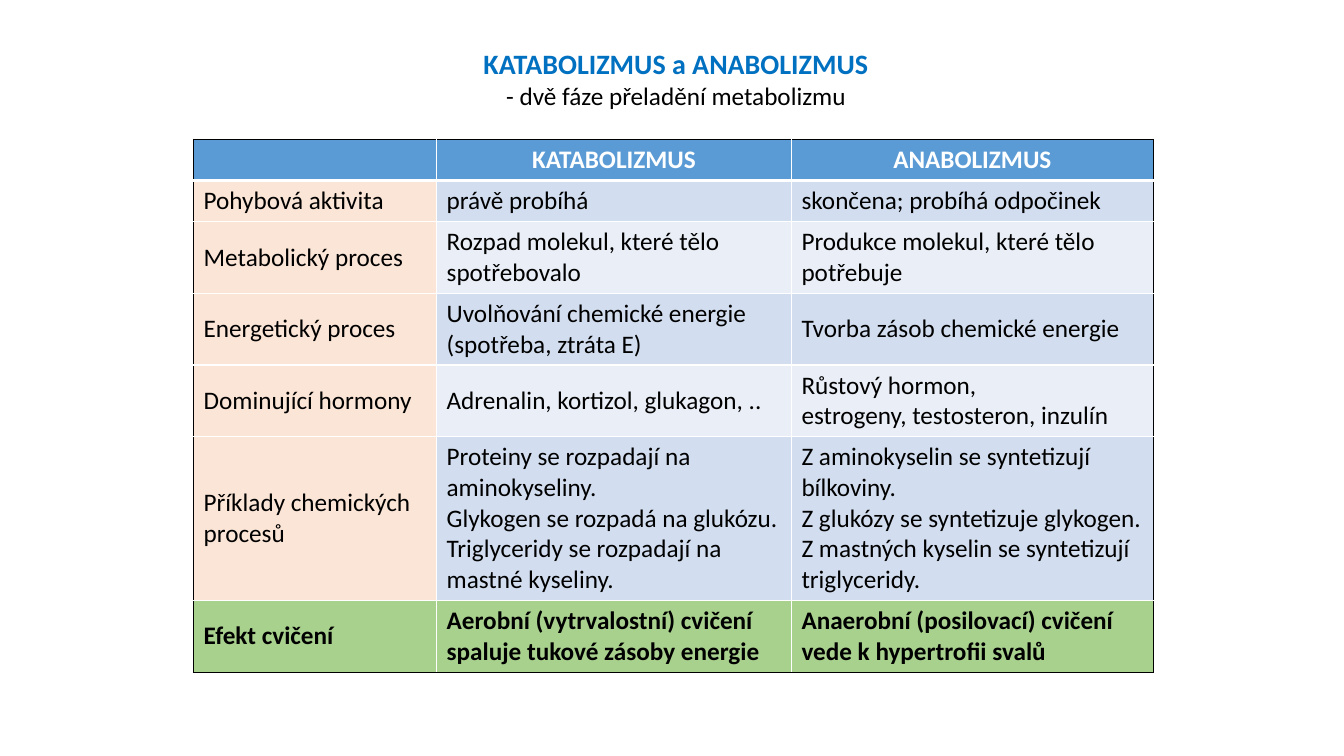
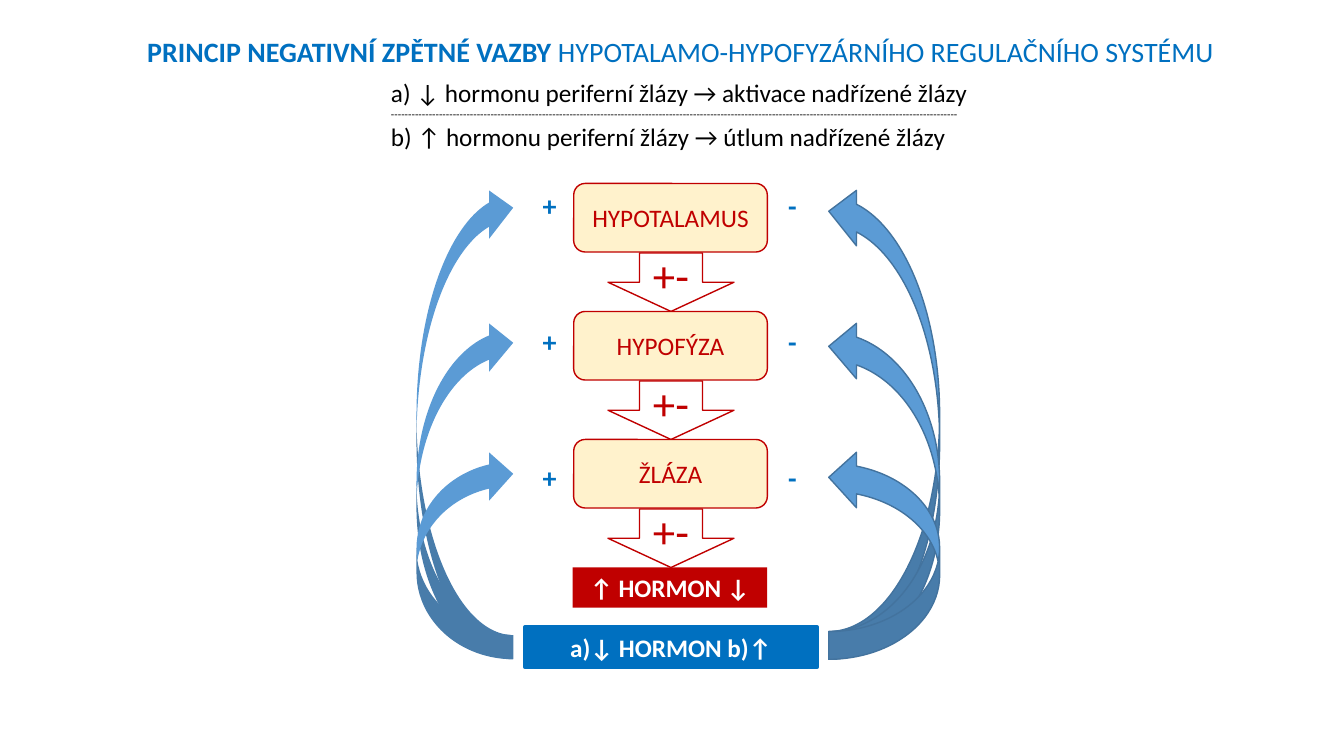
from lxml.etree import SubElement
from pptx import Presentation
from pptx.dml.color import RGBColor
from pptx.enum.shapes import MSO_SHAPE as KIND
from pptx.enum.text import MSO_ANCHOR as ANCHOR, PP_ALIGN as ALIGN
from pptx.oxml.ns import qn
from pptx.util import Pt

PX = 9144
FONT = "Calibri"
HUES = {
    "black": "000000", "white": "FFFFFF", "blue": "0070C0", "red": "C00000",
    "cream": "FFF2CC", "sky": "5B9BD5", "edge": "43739E", "peach": "FBE5D6",
    "green": "A9D18E", "dark": "D2DEEF", "light": "EAEFF7",
}
COLS = [241, 352, 359]
ROWS = [41, 41, 70, 70, 70, 161, 70]
CELLS = [
    ["", "KATABOLIZMUS", "ANABOLIZMUS"],
    ["Pohybová aktivita", "právě probíhá", "skončena; probíhá odpočinek"],
    ["Metabolický proces", "Rozpad molekul, které tělo spotřebovalo",
     "Produkce molekul, které tělo potřebuje"],
    ["Energetický proces", "Uvolňování chemické energie (spotřeba, ztráta E)",
     "Tvorba zásob chemické energie"],
    ["Dominující hormony", "Adrenalin, kortizol, glukagon, ..",
     "Růstový hormon,\nestrogeny, testosteron, inzulín"],
    ["Příklady chemických procesů",
     "Proteiny se rozpadají na aminokyseliny.\nGlykogen se rozpadá na glukózu.\n"
     "Triglyceridy se rozpadají na mastné kyseliny.",
     "Z aminokyselin se syntetizují bílkoviny.\nZ glukózy se syntetizuje glykogen.\n"
     "Z mastných kyselin se syntetizují triglyceridy."],
    ["Efekt cvičení", "Aerobní (vytrvalostní) cvičení spaluje tukové zásoby energie",
     "Anaerobní (posilovací) cvičení vede k hypertrofii svalů"],
]


def tint(name):
    return RGBColor.from_string(HUES[name])


def run(text, size=18, hue="black", bold=False):
    return text, size, hue, bold


def write(frame, lines, align=ALIGN.LEFT, gap=0):
    for i, line in enumerate(lines):
        para = frame.add_paragraph() if i else frame.paragraphs[0]
        para.alignment = align
        if i and gap:
            para.space_before = Pt(gap)
        for text, size, hue, bold in line:
            part = para.add_run()
            part.text = text
            font = part.font
            font.name, font.size, font.bold = FONT, Pt(size), bold
            font.color.rgb = tint(hue)


def label(slide, box, lines, align=ALIGN.CENTER, gap=0):
    frame = slide.shapes.add_textbox(*(n * PX for n in box)).text_frame
    frame.word_wrap = True
    write(frame, lines, align, gap)


def shape(slide, kind, box, fill=None, line=None, width=1, text=None, turn=0):
    item = slide.shapes.add_shape(kind, *(n * PX for n in box))
    item.shadow.inherit = False
    item.rotation = turn
    if fill:
        item.fill.solid()
        item.fill.fore_color.rgb = tint(fill)
    else:
        item.fill.background()
    if line:
        item.line.color.rgb = tint(line)
        item.line.width = Pt(width)
    else:
        item.line.fill.background()
    if text:
        item.text_frame.vertical_anchor = ANCHOR.MIDDLE
        write(item.text_frame, [[text]], ALIGN.CENTER)


def border(cell, side, hue, width):
    line = SubElement(cell._tc.get_or_add_tcPr(), qn("a:ln" + side), w=str(Pt(width)))
    fill = SubElement(line, qn("a:solidFill"))
    SubElement(fill, qn("a:srgbClr"), val=HUES[hue])


def frame_cell(cell, row, col):
    end = len(ROWS) - 1
    outer = {"L": col == 0, "R": col == len(COLS) - 1, "T": row == 0, "B": row == end}
    thick = {(0, "B"), (1, "T")}
    for side, edge in outer.items():
        border(cell, side, "black" if edge else "white", 3 if (row, side) in thick else 1)


def shade(row, col):
    if row == 0:
        return "sky"
    if row == len(ROWS) - 1:
        return "green"
    if col == 0:
        return "peach"
    return "dark" if row % 2 else "light"


def grid(slide, left, top):
    size = (left, top, sum(COLS), sum(ROWS))
    table = slide.shapes.add_table(len(ROWS), len(COLS), *(n * PX for n in size)).table
    table.first_row = table.horz_banding = False
    for col, width in enumerate(COLS):
        table.columns[col].width = width * PX
    for row, height in enumerate(ROWS):
        table.rows[row].height = height * PX
        head = row == 0
        bold = head or row == len(ROWS) - 1
        for col, text in enumerate(CELLS[row]):
            cell = table.cell(row, col)
            frame_cell(cell, row, col)
            cell.fill.solid()
            cell.fill.fore_color.rgb = tint(shade(row, col))
            cell.vertical_anchor = ANCHOR.TOP if head else ANCHOR.MIDDLE
            if text:
                hue = "white" if head else "black"
                lines = [[run(part, 18, hue, bold)] for part in text.split("\n")]
                write(cell.text_frame, lines, ALIGN.CENTER if head else ALIGN.LEFT)


def phases(slide):
    grid(slide, 192, 138)
    label(slide, (442, 41, 457, 74), [
        [run("KATABOLIZMUS a ANABOLIZMUS", 20, "blue", True)],
        [run("- dvě fáze přeladění metabolizmu")],
    ])


def loops(slide):
    base, mid = 654, 877
    for top in (182, 316, 446):
        tall = base - top
        shape(slide, KIND.CURVED_UP_ARROW, (mid - tall // 2, top + tall // 2 - 55, tall, 110),
              "sky", "edge", turn=270)
        shape(slide, KIND.CURVED_LEFT_ARROW, (413, top, 96, tall), "sky", turn=180)


def chain(slide):
    for i, name in enumerate(["HYPOTALAMUS", "HYPOFÝZA", "ŽLÁZA"]):
        top = 182 + 127 * i
        shape(slide, KIND.ROUNDED_RECTANGLE, (569, top, 192, 68), "cream", "red",
              text=run(name, 18, "red"))
        shape(slide, KIND.DOWN_ARROW, (603, top + 69, 125, 58), None, "red",
              text=run("+-", 32, "red"))
    shape(slide, KIND.RECTANGLE, (568, 563, 193, 40), "red",
          text=run("↑ HORMON ↓", 18, "white", True))
    shape(slide, KIND.RECTANGLE, (521, 622, 289, 40), "blue", "blue", 3,
          run("a)↓ HORMON b)↑", 18, "white", True))


def feedback(slide):
    label(slide, (116, 29, 1118, 44), [[
        run("PRINCIP NEGATIVNÍ ZPĚTNÉ VAZBY ", 20, "blue", True),
        run("HYPOTALAMO-HYPOFYZÁRNÍHO REGULAČNÍHO SYSTÉMU", 20, "blue"),
    ]])
    label(slide, (378, 72, 593, 84), [
        [run("a) ↓ hormonu periferní žlázy → aktivace nadřízené žlázy")],
        [run("-" * 165, 8)],
        [run("b) ↑ hormonu periferní žlázy → útlum nadřízené žlázy")],
    ], ALIGN.LEFT)
    loops(slide)
    chain(slide)
    for left, sign in ((521, "+"), (762, "-")):
        label(slide, (left, 182, 48, 313), [[run(sign, 20, "blue", True)]] * 3, gap=73)


def main():
    deck = Presentation()
    deck.slide_width, deck.slide_height = 1333 * PX, 750 * PX
    for build in (phases, feedback):
        build(deck.slides.add_slide(deck.slide_layouts[6]))
    deck.save("out.pptx")


if __name__ == "__main__":
    main()
